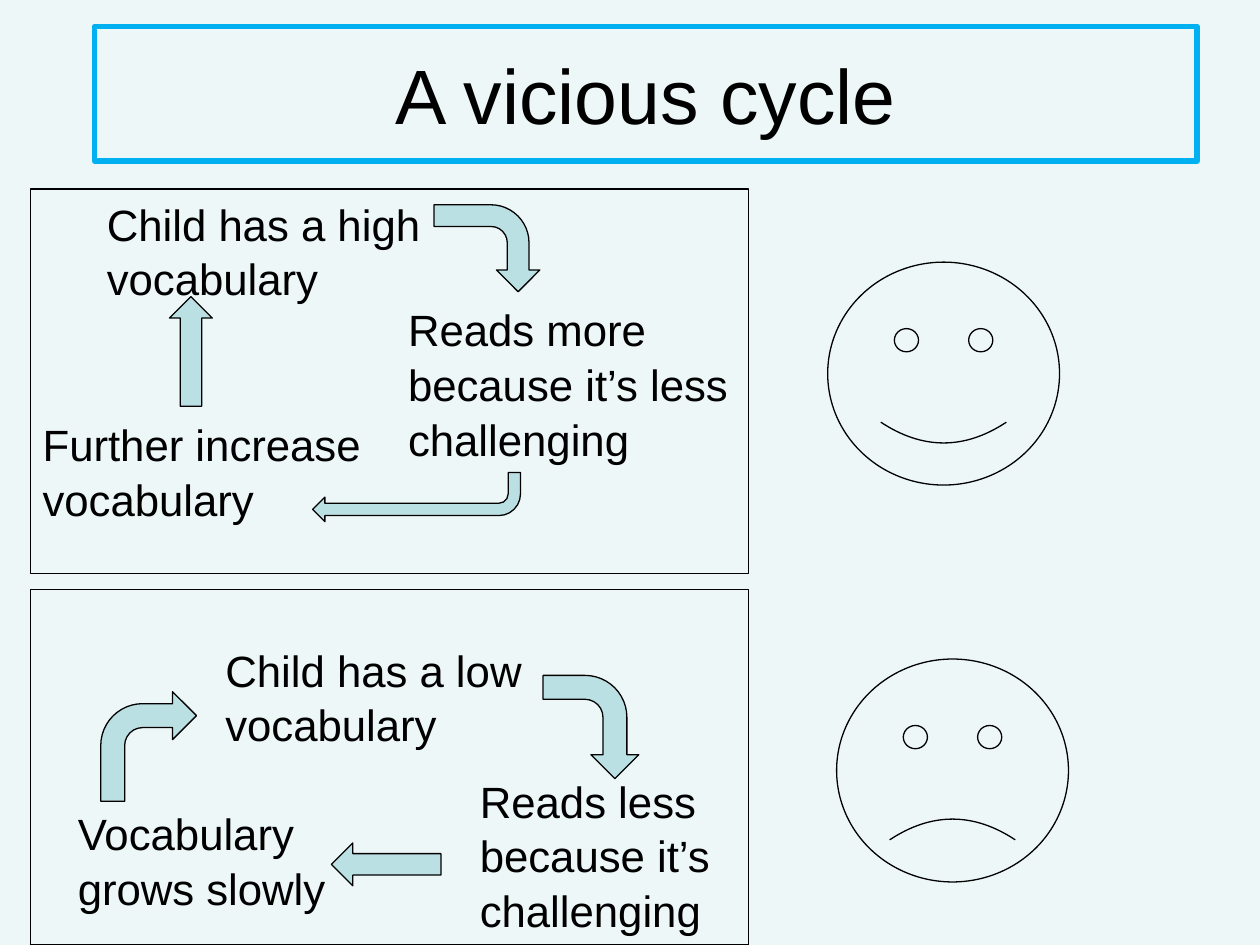
from pptx import Presentation
from pptx.dml.color import RGBColor
from pptx.enum.shapes import MSO_SHAPE
from pptx.enum.text import MSO_ANCHOR, PP_ALIGN
from pptx.util import Pt

FONT = "Arial"
BLACK, BORDER_BLUE, ARROW_BLUE, BACKGROUND = "000000", "00B0F0", "BBE0E3", "EDF7F7"

PANELS = [(17.3, 108, 410.4, 219.6), (17.3, 337, 410.4, 203)]

STEPS = [
    ("Child has a high vocabulary", 54, 108, 223.2, 59),
    ("Reads more because it’s less challenging", 226.1, 168.5, 234.7, 87.1),
    ("Further increase vocabulary", 17.3, 234, 234.7, 87.1),
    ("Child has a low vocabulary", 121.7, 362.9, 215.3, 59),
    ("Reads less because it’s challenging", 267.1, 437.8, 234.7, 87.1),
    ("Vocabulary grows slowly", 37.4, 456.5, 198.7, 79.2),
]

# Shape, box before rotation, rotation in degrees, adjustments
ARROWS = [
    (MSO_SHAPE.BENT_ARROW, (253.4, 111.6, 49.7, 60.5), 90, ()),
    (MSO_SHAPE.BENT_ARROW, (178.6, 270, 118.8, 28.1), 180, (0.25, 0.25, 0.25, 0.44)),
    (MSO_SHAPE.LEFT_ARROW, (77.8, 188.6, 62.6, 24.5), 90, ()),
    (MSO_SHAPE.BENT_ARROW, (308.2, 388.1, 59, 54.7), 90, ()),
    (MSO_SHAPE.LEFT_ARROW, (189.4, 481.7, 62.6, 24.5), 0, ()),
    (MSO_SHAPE.BENT_ARROW, (57.6, 395.3, 54.7, 62.6), 0, ()),
]

FACES = [((473, 149.8, 132.5, 127.4), 0.05), ((478.1, 376.6, 132.5, 127.4), -0.05)]


def rgb(value):
    return RGBColor.from_string(value)


def points(box):
    return [Pt(length) for length in box]


def format_text(p, size):
    for r in p.runs:
        r.font.name = FONT
        r.font.size = Pt(size)
        r.font.color.rgb = rgb(BLACK)


def add_title(slide, text, box):
    sp = slide.shapes.title
    sp.left, sp.top, sp.width, sp.height = points(box)
    sp.line.color.rgb = rgb(BORDER_BLUE)
    sp.line.width = Pt(3)
    tf = sp.text_frame
    tf.text = text
    tf.vertical_anchor = MSO_ANCHOR.MIDDLE
    p = tf.paragraphs[0]
    p.alignment = PP_ALIGN.CENTER
    format_text(p, 44)


def add_step(slide, text, *box):
    tf = slide.shapes.add_textbox(*points(box)).text_frame
    tf.word_wrap = True
    tf.text = text
    p = tf.paragraphs[0]
    p.space_before = Pt(5)
    p.line_spacing = 1.04
    format_text(p, 25)


def add_outlined(slide, kind, box, fill=None, rotation=0, adjustments=()):
    sp = slide.shapes.add_shape(kind, *points(box))
    sp.shadow.inherit = False
    sp.rotation = rotation
    for i, value in enumerate(adjustments):
        sp.adjustments[i] = value
    if fill:
        sp.fill.solid()
        sp.fill.fore_color.rgb = rgb(fill)
    else:
        sp.fill.background()
    sp.line.color.rgb = rgb(BLACK)
    sp.line.width = Pt(0.75)


def main():
    prs = Presentation()
    prs.slide_width, prs.slide_height = Pt(720), Pt(540)
    slide = prs.slides.add_slide(prs.slide_layouts[5])
    slide.background.fill.solid()
    slide.background.fill.fore_color.rgb = rgb(BACKGROUND)

    add_title(slide, "A vicious cycle", (54, 15, 630, 77))
    for step in STEPS:
        add_step(slide, *step)
    for kind, box, rotation, adjustments in ARROWS:
        add_outlined(slide, kind, box, ARROW_BLUE, rotation, adjustments)
    for box in PANELS:
        add_outlined(slide, MSO_SHAPE.RECTANGLE, box)
    for box, smile in FACES:
        add_outlined(slide, MSO_SHAPE.SMILEY_FACE, box, adjustments=(smile,))

    prs.save("out.pptx")


if __name__ == "__main__":
    main()
